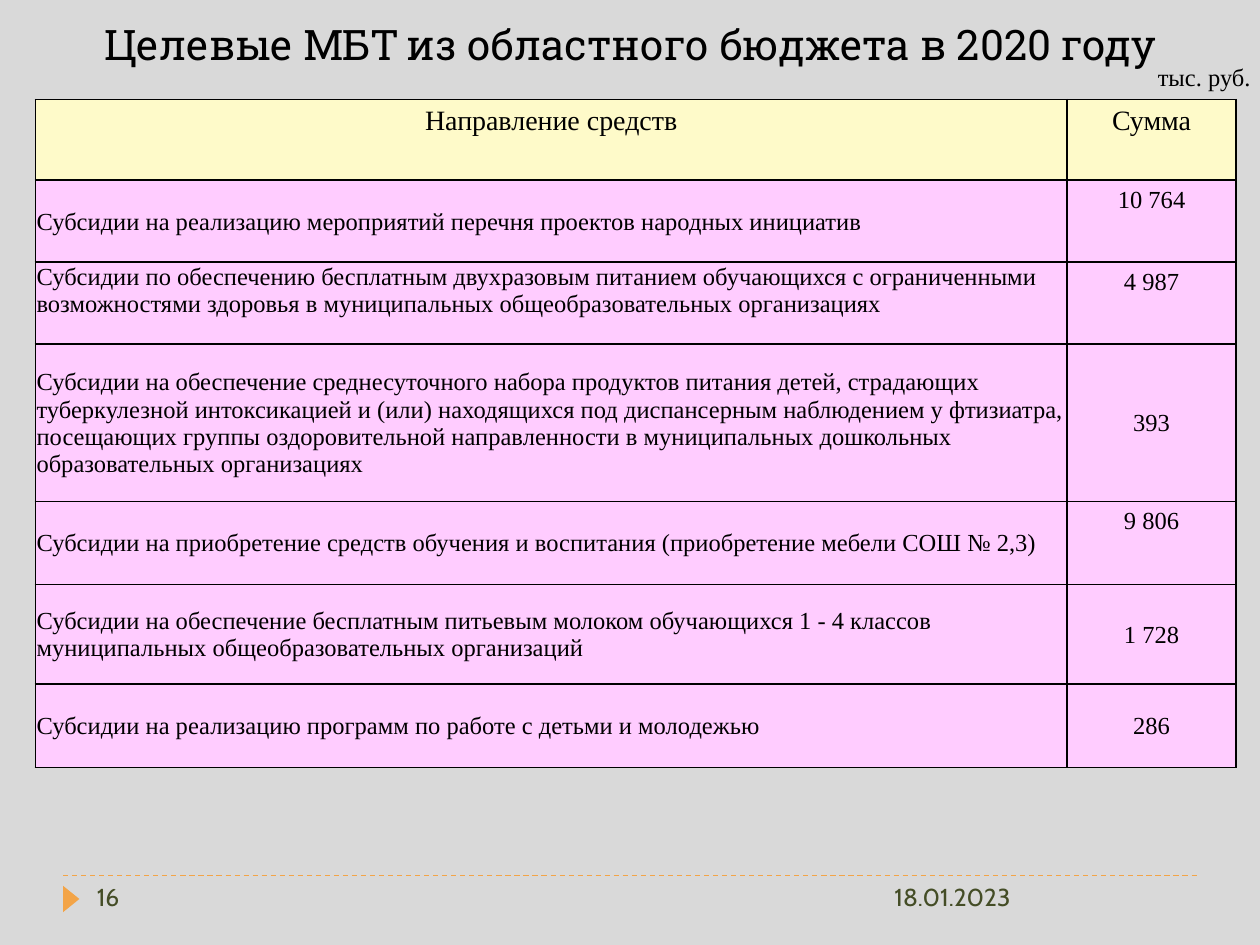
from lxml.etree import SubElement as Sub
from pptx import Presentation
from pptx.dml.color import RGBColor
from pptx.enum.dml import MSO_LINE as Dash
from pptx.enum.shapes import MSO_CONNECTOR as Conn, MSO_SHAPE as Shape
from pptx.enum.text import MSO_ANCHOR as Anchor, MSO_AUTO_SIZE as Fit, PP_ALIGN as Align
from pptx.oxml.ns import qn
from pptx.util import Inches, Pt

BLACK = RGBColor(0x00, 0x00, 0x00)
GREY = RGBColor(0xD9, 0xD9, 0xD9)
CREAM = RGBColor(0xFE, 0xFA, 0xC9)
PINK = RGBColor(0xFF, 0xCC, 0xFF)
AMBER = RGBColor(0xF3, 0xA4, 0x47)
OLIVE = RGBColor(0x44, 0x4D, 0x26)
SERIF, SLAB, SANS = "Times New Roman", "Roboto Slab", "Cabin"

TOP, MID = Anchor.TOP, Anchor.MIDDLE
COLS = [8.19, 1.34]
HEAD = ("Направление средств", "Сумма")
# Purpose, sum, row height, anchor of the purpose, anchor of the sum
ROWS = [
    ("Субсидии на реализацию мероприятий перечня проектов народных инициатив",
     "10 764", 0.65, MID, TOP),
    ("Субсидии по обеспечению бесплатным двухразовым питанием обучающихся "
     "с ограниченными возможностями здоровья в муниципальных "
     "общеобразовательных организациях",
     "4 987", 0.65, TOP, TOP),
    ("Субсидии на обеспечение среднесуточного набора продуктов питания детей, "
     "страдающих туберкулезной интоксикацией и (или) находящихся под "
     "диспансерным наблюдением у фтизиатра, посещающих группы оздоровительной "
     "направленности в муниципальных дошкольных образовательных организациях",
     "393", 1.25, MID, MID),
    ("Субсидии на приобретение средств обучения и воспитания "
     "(приобретение мебели СОШ № 2,3)",
     "9 806", 0.66, MID, TOP),
    ("Субсидии на обеспечение бесплатным питьевым молоком обучающихся "
     "1 - 4 классов муниципальных общеобразовательных организаций",
     "1 728", 0.79, MID, MID),
    ("Субсидии на реализацию программ по работе с детьми и молодежью",
     "286", 0.66, MID, MID),
]


def write(frame, text, size, font, color=BLACK, align=Align.LEFT):
    para = frame.paragraphs[0]
    para.alignment = align
    run = para.add_run()
    run.text = text
    run.font.size = Pt(size)
    run.font.name = font
    run.font.color.rgb = color


def add_title(slide, text):
    title = slide.shapes.title
    title.left, title.top = Inches(0.5), Inches(-0.19)
    title.width, title.height = Inches(9), Inches(0.79)
    frame = title.text_frame
    frame.auto_size = Fit.NONE
    frame.vertical_anchor = Anchor.BOTTOM
    write(frame, text, 24, SLAB, align=Align.CENTER)


def add_note(slide, text, left, top, width, height, font, color):
    box = slide.shapes.add_textbox(
        Inches(left), Inches(top), Inches(width), Inches(height))
    box.text_frame.word_wrap = True
    write(box.text_frame, text, 14, font, color)


def add_rule(slide, left, right, top):
    rule = slide.shapes.add_connector(
        Conn.STRAIGHT, Inches(left), Inches(top), Inches(right), Inches(top))
    rule.line.color.rgb = AMBER
    rule.line.width = Pt(0.75)
    rule.line.dash_style = Dash.DASH
    Sub(rule._element.spPr, qn("a:effectLst"))


def add_mark(slide):
    mark = slide.shapes.add_shape(
        Shape.ISOSCELES_TRIANGLE,
        Inches(0.46), Inches(7.07), Inches(0.21), Inches(0.13))
    mark.rotation = 90
    mark.shadow.inherit = False
    mark.fill.solid()
    mark.fill.fore_color.rgb = AMBER
    mark.line.fill.background()


def add_edges(cell):
    props = cell._tc.get_or_add_tcPr()
    for side in ("lnL", "lnR", "lnT", "lnB"):
        edge = Sub(props, qn("a:" + side), w=str(Pt(1)))
        fill = Sub(edge, qn("a:solidFill"))
        Sub(fill, qn("a:srgbClr"), val=str(BLACK))


def fill_cell(cell, text, size, color, align, anchor, tight=False):
    add_edges(cell)
    cell.fill.solid()
    cell.fill.fore_color.rgb = color
    cell.vertical_anchor = anchor
    if tight:
        cell.margin_left = cell.margin_right = cell.margin_top = Inches(0.01)
        cell.margin_bottom = 0
    write(cell.text_frame, text, size, SERIF, align=align)


def add_grid(slide):
    highs = [0.64] + [row[2] for row in ROWS]
    grid = slide.shapes.add_table(
        len(highs), len(COLS), Inches(0.28), Inches(0.79),
        Inches(sum(COLS)), Inches(sum(highs))).table
    grid.first_row = grid.horz_banding = False
    for col, width in zip(grid.columns, COLS):
        col.width = Inches(width)
    for row, high in zip(grid.rows, highs):
        row.height = Inches(high)
    for x, text in enumerate(HEAD):
        fill_cell(grid.cell(0, x), text, 16, CREAM, Align.CENTER, TOP)
    for y, (goal, total, _, left, right) in enumerate(ROWS, 1):
        fill_cell(grid.cell(y, 0), goal, 14, PINK, Align.LEFT, left, True)
        fill_cell(grid.cell(y, 1), total, 14, PINK, Align.CENTER, right,
                  right == MID)


def main():
    deck = Presentation()
    deck.slide_width, deck.slide_height = Inches(10), Inches(7.5)
    slide = deck.slides.add_slide(deck.slide_layouts[5])
    slide.background.fill.solid()
    slide.background.fill.fore_color.rgb = GREY

    # Footer
    add_rule(slide, 0.5, 9.5, 6.95)
    add_mark(slide)
    add_note(slide, "18.01.2023", 7, 6.95, 2.5, 0.4, SANS, OLIVE)
    add_note(slide, "16", 0.67, 6.95, 2.17, 0.4, SANS, OLIVE)

    # Title, table and unit
    add_title(slide, "Целевые МБТ из областного бюджета в 2020 году")
    add_grid(slide)
    add_note(slide, "тыс. руб.", 9.09, 0.44, 1.18, 0.34, SERIF, BLACK)

    deck.save("out.pptx")


if __name__ == "__main__":
    main()
